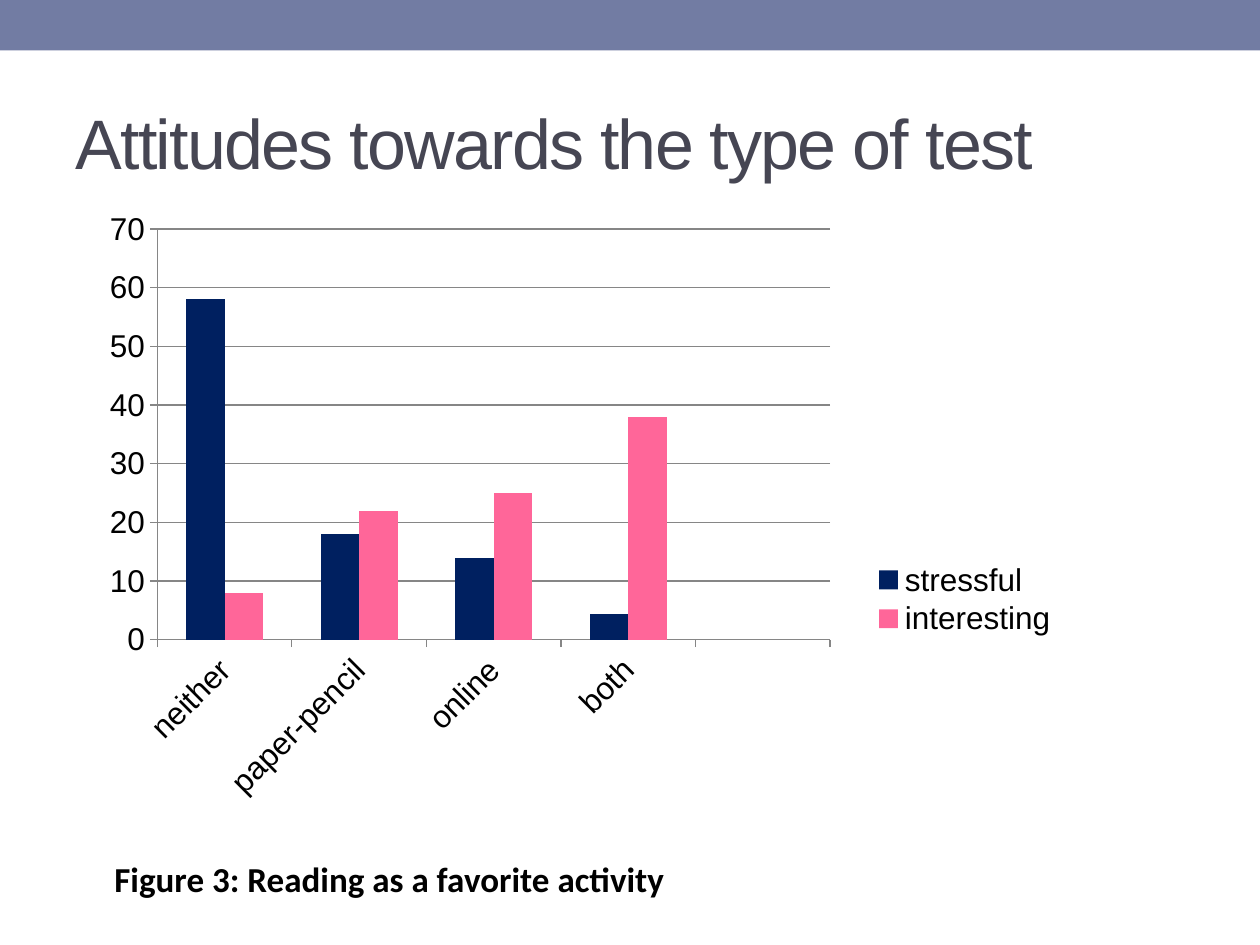
from pptx import Presentation
from pptx.chart.data import CategoryChartData
from pptx.dml.color import RGBColor
from pptx.enum.chart import XL_CHART_TYPE, XL_LEGEND_POSITION, XL_TICK_MARK
from pptx.enum.shapes import MSO_SHAPE
from pptx.enum.text import MSO_ANCHOR, MSO_AUTO_SIZE, PP_ALIGN
from pptx.oxml import parse_xml
from pptx.oxml.ns import nsdecls, qn
from pptx.util import Pt

RECT = MSO_SHAPE.RECTANGLE
COLUMN = XL_CHART_TYPE.COLUMN_CLUSTERED
RIGHT = XL_LEGEND_POSITION.RIGHT
OUT, NONE = XL_TICK_MARK.OUTSIDE, XL_TICK_MARK.NONE
MIDDLE, LEFT = MSO_ANCHOR.MIDDLE, PP_ALIGN.LEFT
GROW = MSO_AUTO_SIZE.SHAPE_TO_FIT_TEXT

COLORS = {"band": "727CA3", "title": "464653", "text": "000000",
          "navy": "002060", "pink": "FF6699", "grid": "868686"}
CATS = ["neither", "paper-pencil", "online", "both", ""]
SERIES = [("stressful", (58, 18, 14, 4.4, None), "navy"),
          ("interesting", (8, 22, 25, 38, None), "pink")]


class Deck:
    def __init__(self, wide, high):
        self.file = Presentation()
        self.file.slide_width, self.file.slide_height = Pt(wide), Pt(high)
        self.slide = self.file.slides.add_slide(self.file.slide_layouts[5])
        self.shapes = self.slide.shapes

    def color(self, name):
        return RGBColor.from_string(COLORS[name])

    def style(self, font, face, size, color, bold=False):
        font.name, font.size, font.bold = face, Pt(size), bold
        font.color.rgb = self.color(color)

    def band(self, *box):
        band = self.shapes.add_shape(RECT, *map(Pt, box))
        band.shadow.inherit = False
        band.fill.solid()
        band.fill.fore_color.rgb = self.color("band")
        band.line.fill.background()

    def title(self, text, *box):
        title = self.shapes.title
        title.left, title.top, title.width, title.height = map(Pt, box)
        frame = title.text_frame
        frame.text = text
        frame.vertical_anchor = MIDDLE
        line = frame.paragraphs[0]
        line.alignment = LEFT
        font = line.runs[0].font
        self.style(font, "Arial", 40, "title")
        line.runs[0]._r.get_or_add_rPr().set("spc", "-100")

    def note(self, text, *box):
        frame = self.shapes.add_textbox(*map(Pt, box)).text_frame
        frame.word_wrap = True
        frame.auto_size = GROW
        frame.text = text
        self.style(frame.paragraphs[0].runs[0].font, "Calibri", 20, "text", True)

    def place(self, part, index, box, inner=False):
        for old in part.findall(qn("c:layout")):
            part.remove(old)
        target = '<c:layoutTarget val="inner"/>' if inner else ""
        modes = "".join(f'<c:{k}Mode val="edge"/>' for k in "xy")
        sizes = "".join(f'<c:{k} val="{v}"/>' for k, v in zip("xywh", box))
        part.insert(index, parse_xml(
            f'<c:layout {nsdecls("c")}><c:manualLayout>{target}{modes}{sizes}'
            "</c:manualLayout></c:layout>"))

    def chart(self, cats, series, *box):
        data = CategoryChartData()
        data.categories = cats
        for name, vals, _ in series:
            data.add_series(name, vals)
        chart = self.shapes.add_chart(COLUMN, *map(Pt, box), data).chart
        chart.has_title = False
        self.style(chart.font, "Arial", 18, "text")
        plot = chart.plots[0]
        plot.gap_width, plot.overlap = 150, 0
        plot.vary_by_categories = False
        for item, (_, _, color) in zip(plot.series, series):
            item.format.fill.solid()
            item.format.fill.fore_color.rgb = self.color(color)
            item.invert_if_negative = False
        axes = chart.category_axis, chart.value_axis
        for axis in axes:
            axis.major_tick_mark, axis.minor_tick_mark = OUT, NONE
        cat, val = axes
        cat.tick_labels._element.get_or_add_txPr().bodyPr.set("rot", "-2700000")
        val.minimum_scale, val.maximum_scale, val.major_unit = 0, 70, 10
        val.has_major_gridlines = True
        for part in (*axes, val.major_gridlines):
            part.format.line.color.rgb = self.color("grid")
            part.format.line.width = Pt(0.75)
        chart.has_legend = True
        chart.legend.position = RIGHT
        chart.legend.include_in_layout = False
        area = chart._chartSpace.chart.plotArea
        self.place(area, 0, (0.065, 0.04, 0.6, 0.66), True)
        self.place(chart.legend._element, 1, (0.7, 0.57, 0.17, 0.13))


def main():
    deck = Deck(720, 540)
    deck.band(0, 0, 720, 28.8)
    deck.title("Attitudes towards the type of test", 36, 41.76, 648, 77.76)
    deck.chart(CATS, SERIES, 48.24, 116.64, 640.8, 355.68)
    deck.note("Figure 3: Reading as a favorite activity", 58.32, 486.72, 504.72, 31.68)
    deck.file.save("out.pptx")


if __name__ == "__main__":
    main()
